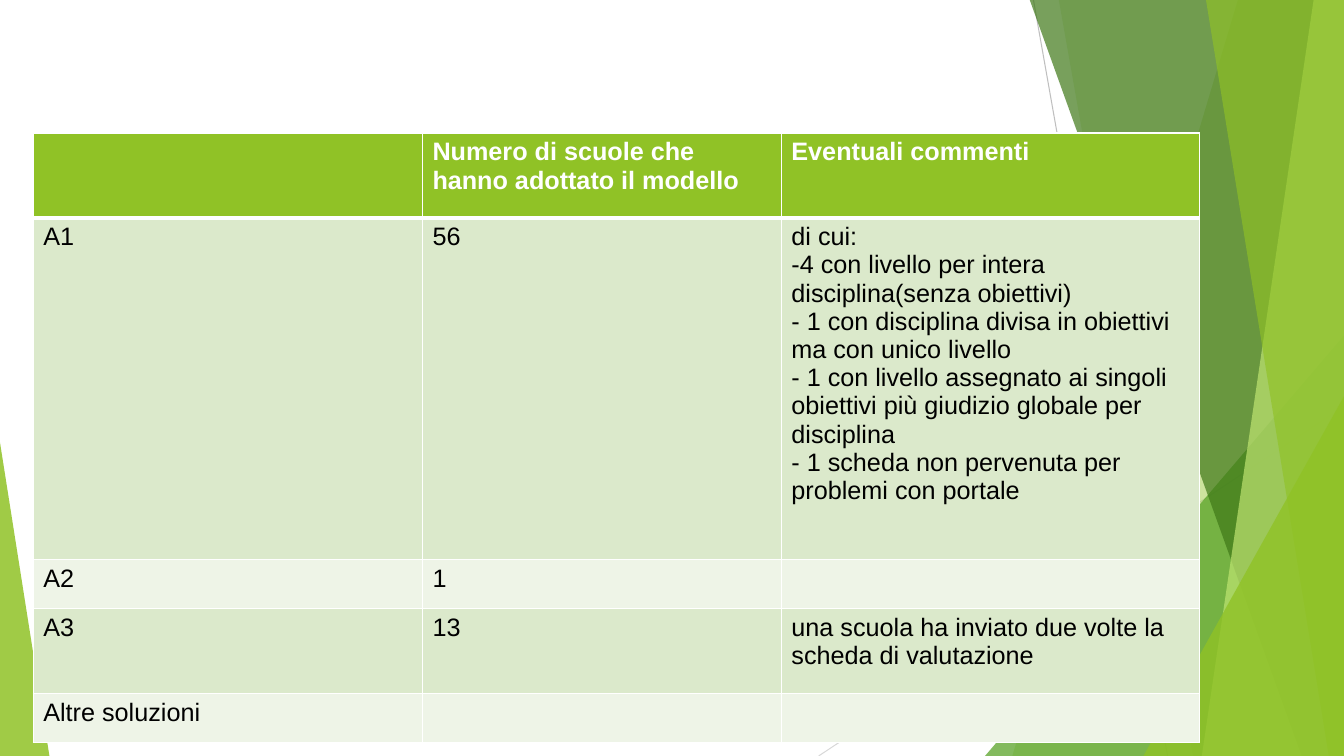
"""Build a slide with a table of assessment models adopted by schools."""
from dataclasses import dataclass

from lxml import etree
from pptx import Presentation
from pptx.dml.color import RGBColor
from pptx.enum.shapes import MSO_CONNECTOR, MSO_SHAPE
from pptx.oxml.ns import qn
from pptx.util import Inches, Pt

STRAIGHT = MSO_CONNECTOR.STRAIGHT
TRIANGLE = MSO_SHAPE.ISOSCELES_TRIANGLE

WHITE = RGBColor(0xFF, 0xFF, 0xFF)
BLACK = RGBColor(0x00, 0x00, 0x00)
GREY = RGBColor(0xBF, 0xBF, 0xBF)
LIGHT_GREY = RGBColor(0xD8, 0xD8, 0xD8)
LIME = RGBColor(0x90, 0xC2, 0x26)
GREEN = RGBColor(0x54, 0xA0, 0x21)
DARK_GREEN = RGBColor(0x3F, 0x78, 0x18)
PALE_LIME = RGBColor(0xBF, 0xE4, 0x71)
BAND_DARK = RGBColor(0xDB, 0xE9, 0xCB)
BAND_LIGHT = RGBColor(0xEE, 0xF4, 0xE7)

WIDTH, HEIGHT, TOP = 13.33, 7.5, -0.01
FONT = "Arial"


@dataclass
class Line:
    start: tuple[float, float]
    end: tuple[float, float]
    color: RGBColor


@dataclass
class Facet:
    top_x: float
    bottom_x: float
    color: RGBColor
    opacity: int


@dataclass
class Corner:
    left: float
    top: float
    width: float
    apex: float
    color: RGBColor
    opacity: int


LINES = [
    Line((10.25, 0), (11.58, HEIGHT), GREY),
    Line((WIDTH, 4.03), (8.12, HEIGHT), LIGHT_GREY),
]
DECOR = [
    Facet(12.28, 10.04, LIME, 30),
    Facet(10.5, 11.83, LIME, 20),
    Corner(9.77, 3.33, 3.56, 1, GREEN, 72),
    Facet(10.21, 12.91, DARK_GREEN, 70),
    Facet(13.03, 11.92, PALE_LIME, 70),
    Facet(11.96, 13.18, LIME, 65),
    Corner(11.34, 3.93, 1.99, 1, LIME, 80),
    Corner(0, 4.39, 0.49, 0, LIME, 85),
]

COLUMNS = [3.86, 3.56, 4.15]
ROW_HEIGHTS = [0.84, 3.39, 0.49, 0.84, 0.49]
ROWS = [
    ["", "Numero di scuole che hanno adottato il modello", "Eventuali commenti"],
    ["A1", "56", "\n".join([
        "di cui:",
        "-4 con livello per intera disciplina(senza obiettivi)",
        "- 1 con disciplina divisa in obiettivi ma con unico livello",
        "- 1 con livello assegnato ai singoli obiettivi più giudizio globale per disciplina",
        "- 1 scheda non pervenuta per problemi con portale",
    ])],
    ["A2", "1", ""],
    ["A3", "13", "una scuola ha inviato due volte la scheda di valutazione"],
    ["Altre soluzioni", "", ""],
]


def add_line(shapes, line: Line) -> None:
    c = shapes.add_connector(STRAIGHT, *map(Inches, line.start + line.end))
    c.line.color.rgb = line.color
    c.line.width = Pt(0.75)
    etree.SubElement(c._element.spPr, qn("a:effectLst"))


def add_decor(shapes, item: Facet | Corner) -> None:
    if isinstance(item, Facet):
        corners = [(WIDTH, TOP), (WIDTH, HEIGHT), (item.bottom_x, HEIGHT)]
        fb = shapes.build_freeform(Inches(item.top_x), Inches(TOP))
        fb.add_line_segments([(Inches(x), Inches(y)) for x, y in corners])
        sp = fb.convert_to_shape()
    else:
        box = (item.left, item.top, item.width, HEIGHT - item.top)
        sp = shapes.add_shape(TRIANGLE, *map(Inches, box))
        sp.adjustments[0] = item.apex
    sp.shadow.inherit = False
    sp.line.fill.background()
    sp.fill.solid()
    sp.fill.fore_color.rgb = item.color
    color = sp._element.spPr.find(f"{qn('a:solidFill')}/{qn('a:srgbClr')}")
    etree.SubElement(color, qn("a:alpha"), val=str(item.opacity * 1000))


def set_borders(cell, bottom: float) -> None:
    tcPr = cell._tc.get_or_add_tcPr()
    for i, (side, width) in enumerate(zip("LRTB", (1, 1, 1, bottom))):
        ln = etree.Element(qn(f"a:ln{side}"), w=str(Pt(width)))
        fill = etree.SubElement(ln, qn("a:solidFill"))
        etree.SubElement(fill, qn("a:srgbClr"), val=str(WHITE))
        tcPr.insert(i, ln)


def fill_cell(cell, text: str, row: int) -> None:
    header = row == 0
    cell.text = text
    cell.fill.solid()
    cell.fill.fore_color.rgb = LIME if header else BAND_DARK if row % 2 else BAND_LIGHT
    set_borders(cell, 3 if header else 1)
    for p in cell.text_frame.paragraphs:
        p.font.name = FONT
        p.font.size = Pt(18)
        p.font.bold = header
        p.font.color.rgb = WHITE if header else BLACK


def add_school_table(shapes) -> None:
    box = (0.33, 1.32, sum(COLUMNS), sum(ROW_HEIGHTS))
    table = shapes.add_table(len(ROWS), len(COLUMNS), *map(Inches, box)).table
    for column, width in zip(table.columns, COLUMNS):
        column.width = Inches(width)
    for i, (height, texts) in enumerate(zip(ROW_HEIGHTS, ROWS)):
        table.rows[i].height = Inches(height)
        for j, text in enumerate(texts):
            fill_cell(table.cell(i, j), text, i)


def main() -> None:
    prs = Presentation()
    prs.slide_width, prs.slide_height = Inches(WIDTH), Inches(HEIGHT)
    s = prs.slides.add_slide(prs.slide_layouts[6])
    for line in LINES:
        add_line(s.shapes, line)
    for item in DECOR:
        add_decor(s.shapes, item)
    add_school_table(s.shapes)
    prs.save("out.pptx")


if __name__ == "__main__":
    main()
